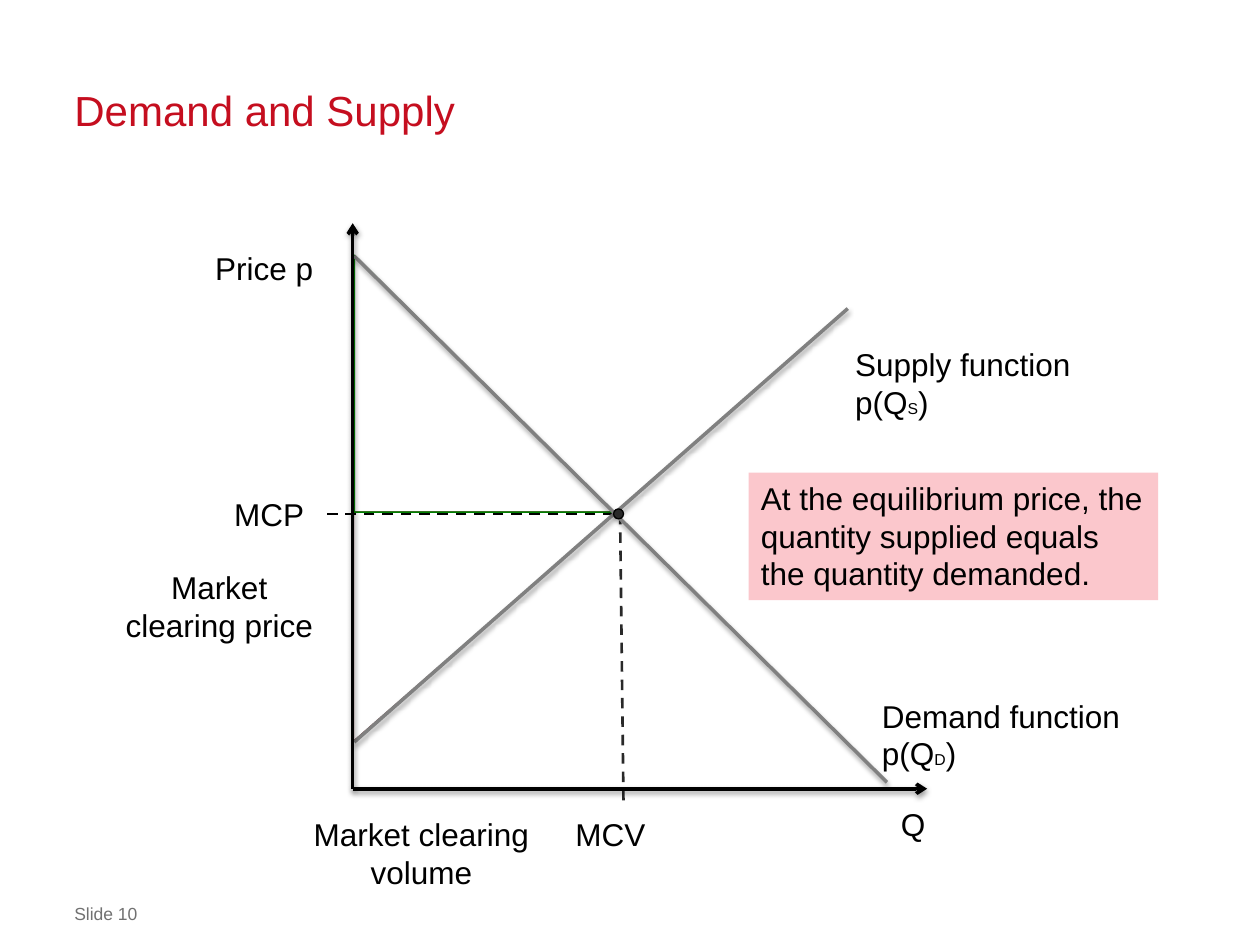
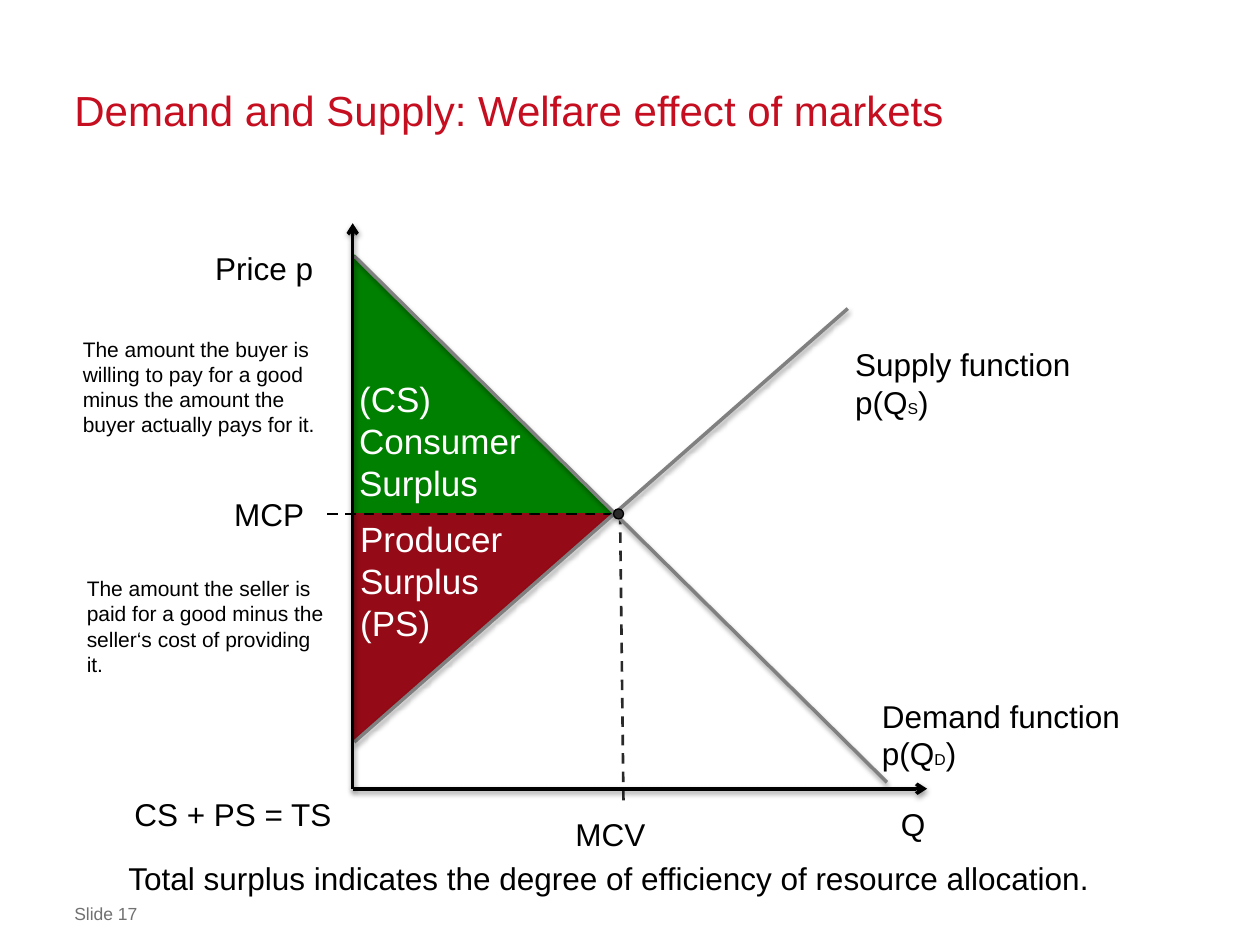
from lxml import etree
from pptx import Presentation
from pptx import util as u
from pptx.dml.color import RGBColor
from pptx.enum import dml, shapes, text
from pptx.oxml import ns

RED = RGBColor(0xC5, 0x0E, 0x1F)
GREY = RGBColor(0x71, 0x71, 0x71)
CURVE = RGBColor(0x80, 0x80, 0x80)
BLACK = RGBColor(0, 0, 0)
DARK = RGBColor(0x29, 0x29, 0x29)
WHITE = RGBColor(0xFF, 0xFF, 0xFF)
PINK = RGBColor(0xFB, 0xC7, 0xCC)
GREEN = RGBColor(0, 0x80, 0)
WINE = RGBColor(0x94, 0x0A, 0x17)
WINE_EDGE = RGBColor(0x62, 0x07, 0x0F)

FONT = "Arial"
ORIGIN = (7.11, 15.9)
MEET = (12.37, 10.36)


def cms(*sizes):
    return [u.Cm(size) for size in sizes]


def style(run, size, color):
    run.font.name = FONT
    run.font.size = u.Pt(size)
    run.font.color.rgb = color


def add_text(slide, box, words, size=18, color=BLACK, center=False, inset=True):
    """Add a wrapped text box; each newline starts a paragraph."""
    shape = slide.shapes.add_textbox(*cms(*box))
    frame = shape.text_frame
    frame.word_wrap = True
    if not inset:
        frame.margin_left = frame.margin_right = 0
        frame.margin_top = frame.margin_bottom = 0
    frame.text = words
    for para in frame.paragraphs:
        if center:
            para.alignment = text.PP_ALIGN.CENTER
        for run in para.runs:
            style(run, size, color)
    return shape


def add_title(slide, words):
    frame = add_text(slide, (1.5, 1.7, 22.4, 1.01), words, 24, RED,
                     inset=False).text_frame
    frame.vertical_anchor = text.MSO_ANCHOR.BOTTOM
    frame.paragraphs[0].line_spacing = u.Pt(30)


def add_footer(slide, number):
    add_text(slide, (1.5, 18.21, 18.39, 0.43), f"Slide {number}", 10, GREY,
             inset=False)


def add_line(slide, start, end, color, width, dash=False, arrow=False,
             shadow=False):
    line = slide.shapes.add_connector(shapes.MSO_CONNECTOR.STRAIGHT,
                                      *cms(*start, *end))
    line.line.color.rgb = color
    line.line.width = u.Pt(width)
    if dash:
        line.line.dash_style = dml.MSO_LINE.DASH
    props = line._element.spPr
    if arrow:
        etree.SubElement(props.find(ns.qn("a:ln")), ns.qn("a:tailEnd"),
                         type="arrow")
    effects = etree.SubElement(props, ns.qn("a:effectLst"))
    if shadow:
        outer = etree.SubElement(
            effects, ns.qn("a:outerShdw"), blurRad=str(u.Pt(3.1)),
            dist=str(u.Pt(1.6)), dir="5400000", rotWithShape="0")
        tint = etree.SubElement(outer, ns.qn("a:srgbClr"), val=str(BLACK))
        etree.SubElement(tint, ns.qn("a:alpha"), val="38000")


def add_shape(slide, kind, box, fill, edge):
    shape = slide.shapes.add_shape(kind, *cms(*box))
    shape.shadow.inherit = False
    if fill is None:
        shape.fill.background()
    else:
        shape.fill.solid()
        shape.fill.fore_color.rgb = fill
    shape.line.color.rgb = edge
    shape.line.width = u.Pt(0.75)
    return shape


def add_area(slide, box, apex, fill, edge):
    """Add a surplus triangle whose base lies on the price axis."""
    area = add_shape(slide, shapes.MSO_SHAPE.ISOSCELES_TRIANGLE, box, fill, edge)
    area.adjustments[0] = apex
    area.rotation = 90


def add_curve(slide, start, end, spot, name, sub):
    """Add a sloped line with its label, such as p(Q) with a small index."""
    add_line(slide, start, end, CURVE, 2, shadow=True)
    label = add_text(slide, (*spot, 6.2, 1.8), f"{name}\np(Q")
    para = label.text_frame.paragraphs[1]
    for part, size in ((sub, 9), (")", 18)):
        run = para.add_run()
        run.text = part
        style(run, size, BLACK)


def add_market(slide, filled):
    """Draw the whole diagram, with or without the surplus areas filled."""
    add_area(slide, (7.47, 9.98, 4.62, 5.31), 0, WINE if filled else None,
             WINE_EDGE)
    add_area(slide, (7.16, 5.13, 5.18, 5.21), 1, GREEN if filled else None,
             GREEN)
    if filled:
        add_text(slide, (7.01, 10.31, 4.34, 2.82), "Producer Surplus\v(PS)",
                 20, WHITE)
        add_text(slide, (6.99, 7.49, 4.75, 2.82), "(CS)\nConsumer Surplus",
                 20, WHITE)

    add_line(slide, MEET, (6.48, MEET[1]), BLACK, 1.5, dash=True)
    add_line(slide, (12.5, MEET[1]), (12.57, 16.28), DARK, 1.5, dash=True)
    add_curve(slide, (7.14, 14.96), (17.09, 6.22), (16.99, 6.83),
              "Supply function", "S")
    add_curve(slide, (7.14, 5.16), (17.88, 15.77), (17.53, 13.92),
              "Demand function", "D")
    for tip in ((ORIGIN[0], 4.5), (18.69, ORIGIN[1])):
        add_line(slide, ORIGIN, tip, BLACK, 2, arrow=True, shadow=True)

    for left, top, width, words in (
            (4.47, 9.86, 2.01, "MCP"), (11.35, 16.31, 2.41, "MCV"),
            (4.09, 4.9, 2.79, "Price p"), (17.91, 16.1, 3.61, "Q")):
        add_text(slide, (left, top, width, 1.02), words)
    add_shape(slide, shapes.MSO_SHAPE.OVAL, (MEET[0], 10.26, 0.2, 0.2), DARK,
              BLACK)


def add_slide(deck, title, number, filled):
    slide = deck.slides.add_slide(deck.slide_layouts[6])
    add_title(slide, title)
    add_footer(slide, number)
    add_market(slide, filled)
    return slide


def main():
    deck = Presentation()
    deck.slide_width, deck.slide_height = cms(25.4, 19.05)

    slide = add_slide(deck, "Demand and Supply", 10, False)
    add_text(slide, (2.16, 11.33, 4.52, 1.8), "Market clearing price",
             center=True)
    add_text(slide, (5.89, 16.31, 5.21, 1.8), "Market clearing volume",
             center=True)
    note = add_text(slide, (15.09, 9.53, 8.26, 2.57),
                    "At the equilibrium price, the quantity supplied equals "
                    "the quantity demanded.")
    note.fill.solid()
    note.fill.fore_color.rgb = PINK

    slide = add_slide(deck, "Demand and Supply: Welfare effect of markets", 17,
                      True)
    add_text(slide, (2.34, 17.2, 19.99, 1.02),
             "Total surplus indicates the degree of efficiency of resource "
             "allocation.")
    add_text(slide, (1.42, 6.65, 5.41, 2.31),
             "The amount the buyer is willing to pay for a good minus the "
             "amount the buyer actually pays for it.", 12)
    add_text(slide, (1.5, 11.48, 5.41, 2.31),
             "The amount the seller is paid for a good minus the seller‘s "
             "cost of providing it.", 12)
    add_text(slide, (2.46, 15.9, 4.62, 1.02), "CS + PS = TS")

    deck.save("out.pptx")


if __name__ == "__main__":
    main()
